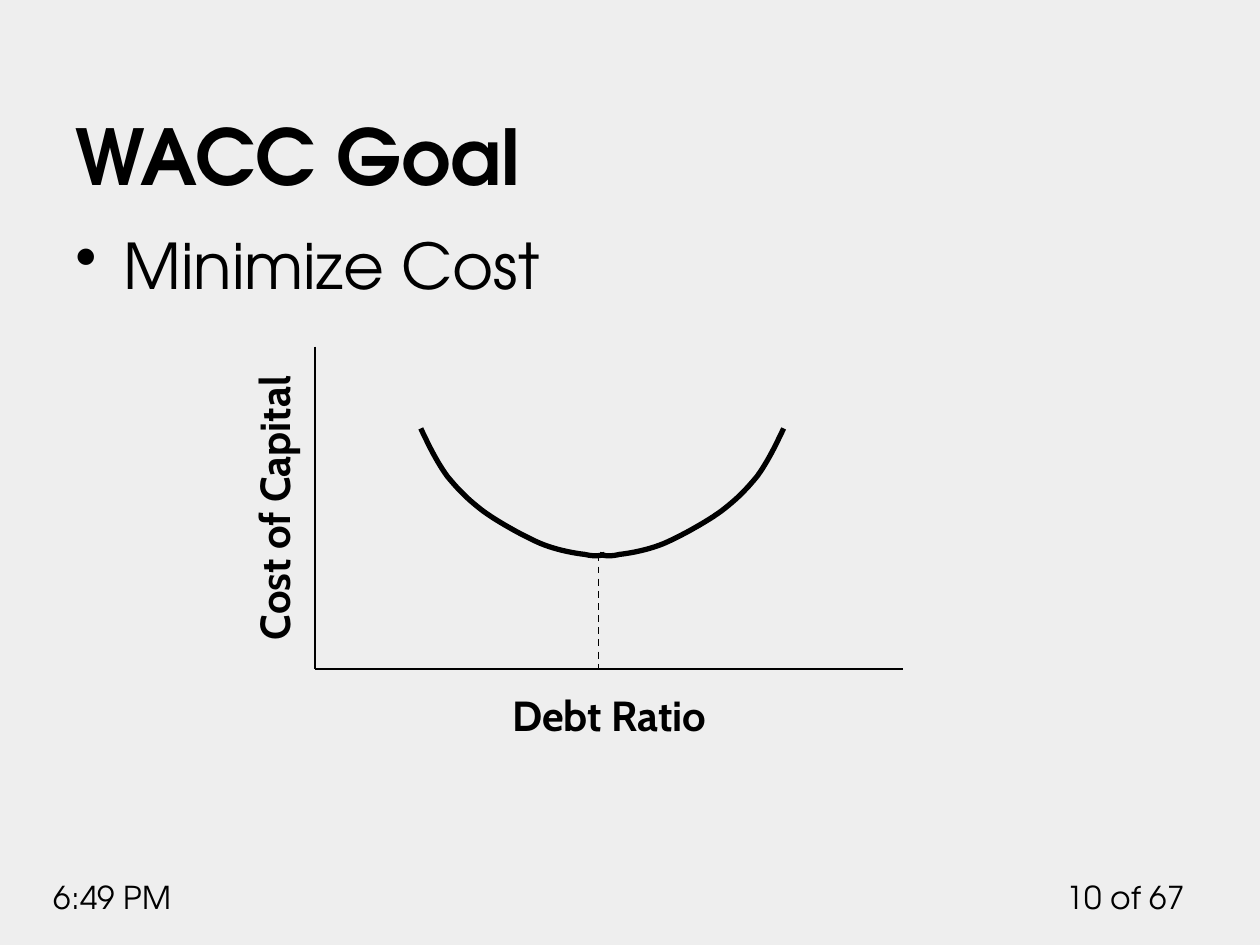
from pptx import Presentation
from pptx.dml.color import RGBColor
from pptx.enum.dml import MSO_LINE
from pptx.enum.shapes import MSO_CONNECTOR
from pptx.enum.text import MSO_ANCHOR as ANCHOR, PP_ALIGN as ALIGN
from pptx.oxml.ns import qn
from pptx.util import Inches, Pt
from lxml.etree import SubElement

COLS, ROWS = 1000, 750  # slide grid, square cells
CELL = Inches(0.01)
BODY_FONT, LABEL_FONT = "TeX Gyre Adventor", "Cabin"
INK, PAPER = "000000", "EEEEEE"
STEPS = 12

# Left half of the cost curve: start, then cubic segments, from the plot's corner
CURVE_START = (84, 65)
CURVE_SEGMENTS = [
    ((90, 78), (97, 92), (105, 103)),
    ((114, 114), (122, 122), (134, 131)),
    ((145, 139), (163, 149), (176, 155)),
    ((189, 161), (205, 164), (214, 165)),
    ((223, 167), (226, 166), (230, 165)),
]
CURVE_AXIS = 228


def color(value):
    return RGBColor.from_string(value)


def grid(*cells):
    return [round(c * CELL) for c in cells]


def add_text(slide, box, text, size, font=BODY_FONT, bold=False, align=ALIGN.LEFT,
             anchor=ANCHOR.TOP, bullet=False, rotation=0):
    sp = slide.shapes.add_textbox(*grid(*box))
    sp.rotation = rotation
    tf = sp.text_frame
    tf.word_wrap = True
    tf.vertical_anchor = anchor
    p = tf.paragraphs[0]
    p.alignment = align
    if bullet:
        pPr = p._p.get_or_add_pPr()
        indent = Inches(0.38)
        pPr.set("marL", str(indent))
        pPr.set("indent", str(-indent))
        SubElement(pPr, qn("a:buChar")).set("char", "•")
    r = p.add_run()
    r.text = text
    r.font.name, r.font.size, r.font.bold = font, Pt(size), bold
    r.font.color.rgb = color(INK)


def add_line(slide, start, end, width, dash=None):
    line = slide.shapes.add_connector(MSO_CONNECTOR.STRAIGHT, *grid(*start, *end))
    line.line.color.rgb = color(INK)
    line.line.width = Pt(width)
    if dash:
        line.line.dash_style = dash
    SubElement(line._element.spPr, qn("a:effectLst"))


def curve_points():
    """Points along the left half of the curve, after its start."""
    p0 = CURVE_START
    for p1, p2, p3 in CURVE_SEGMENTS:
        for step in range(1, STEPS + 1):
            t = step / STEPS
            u = 1 - t
            yield tuple(u**3 * a + 3 * u * u * t * b + 3 * u * t * t * c + t**3 * d
                        for a, b, c, d in zip(p0, p1, p2, p3))
        p0 = p3


def add_half_curve(slide, left, top, mirrored):
    points = [CURVE_START, *curve_points()]
    if mirrored:
        points = [(2 * CURVE_AXIS - x, y) for x, y in points]
    start, *rest = [tuple(grid(left + x, top + y)) for x, y in points]
    builder = slide.shapes.build_freeform(*start)
    builder.add_line_segments(rest, close=False)
    sp = builder.convert_to_shape()
    sp.shadow.inherit = False
    sp.fill.background()
    sp.line.color.rgb = color(INK)
    sp.line.width = Pt(3)


def add_cost_plot(slide, left, top, width, height):
    bottom = top + height
    label = dict(size=24, font=LABEL_FONT, bold=True, align=ALIGN.CENTER)
    label_h = 50
    middle = top + height / 2
    add_text(slide, (left - 33 - height / 2, middle - label_h / 2, height, label_h),
             "Cost of Capital", rotation=270, **label)
    add_text(slide, (left, bottom + 11, width, label_h), "Debt Ratio", **label)
    add_line(slide, (left, top), (left, bottom), 0.75)
    add_line(slide, (left, bottom), (left + width, bottom), 0.75)
    optimum = left + 225
    add_line(slide, (optimum, top + 165), (optimum, bottom), 1, MSO_LINE.DASH)
    for mirrored in (False, True):
        add_half_curve(slide, left, top, mirrored)


def add_heading(slide, left, width):
    add_text(slide, (left, 39, width, 125), "WACC Goal", 44, bold=True,
             anchor=ANCHOR.BOTTOM)
    add_text(slide, (left, 175, width, 495), "Minimize Cost", 36, bullet=True)


def add_footer(slide, top, height):
    add_text(slide, (833, top, 117, height), "10 of 67", 18, align=ALIGN.RIGHT)
    add_text(slide, (33, top, 158, height), "6:49 PM", 18)


def main():
    prs = Presentation()
    prs.slide_width, prs.slide_height = grid(COLS, ROWS)
    slide = prs.slides.add_slide(prs.slide_layouts[6])
    fill = slide.background.fill
    fill.solid()
    fill.fore_color.rgb = color(PAPER)
    add_footer(slide, 692, 40)
    add_heading(slide, 50, 900)
    add_cost_plot(slide, 250, 275, 467, 256)
    prs.save("out.pptx")


if __name__ == "__main__":
    main()
